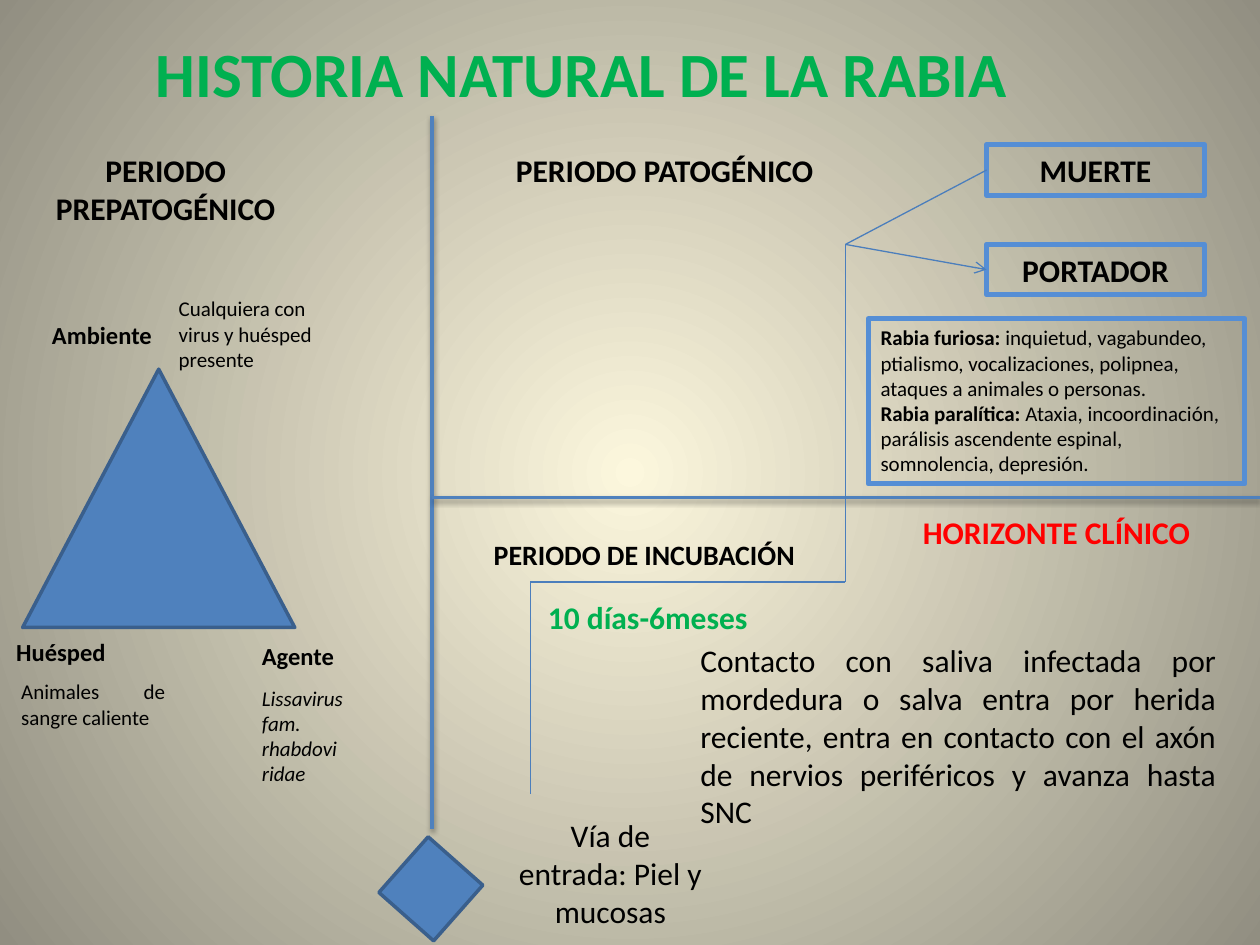
from dataclasses import dataclass

from lxml.etree import SubElement
from pptx import Presentation
from pptx.dml.color import RGBColor
from pptx.enum.shapes import MSO_CONNECTOR, MSO_SHAPE
from pptx.enum.text import MSO_ANCHOR, MSO_AUTO_SIZE, PP_ALIGN
from pptx.oxml.ns import qn
from pptx.util import Inches, Pt


@dataclass(frozen=True)
class Theme:
    font: str = "Calibri"
    ink: str = "000000"
    green: str = "00B050"
    red: str = "FF0000"
    blue: str = "4F81BD"
    dark_blue: str = "3A5F8C"
    path_blue: str = "4B7EBC"
    frame_blue: str = "558ED5"
    glow: str = "FCF7DD"
    edge: str = "918E81"
    title: int = 36
    large: int = 18
    medium: int = 16
    label: int = 14
    small: int = 12


@dataclass(frozen=True)
class Box:
    left: float
    top: float
    width: float
    height: float

    def inner(self, left, top, width, height):
        return Box(self.left + left, self.top + top, width, height)

    def point(self, x, y):
        return self.left + x, self.top + y

    def lengths(self):
        return [Inches(v) for v in (self.left, self.top, self.width, self.height)]


THEME = Theme()


def colour(code):
    return RGBColor.from_string(code)


def add_span(para, text, size, code=THEME.ink, bold=False, italic=False):
    span = para.add_run()
    span.text = text
    font = span.font
    font.name, font.size, font.bold, font.italic = THEME.font, Pt(size), bold, italic
    font.color.rgb = colour(code)


def add_text(page, box, text, size, align=PP_ALIGN.LEFT, **style):
    shape = page.shapes.add_textbox(*box.lengths())
    frame = shape.text_frame
    frame.word_wrap = True
    frame.auto_size = MSO_AUTO_SIZE.SHAPE_TO_FIT_TEXT
    para = frame.paragraphs[0]
    para.alignment = align
    add_span(para, text, size, **style)


def fill_placeholder(shape, box, text, size, code, anchor):
    shape.left, shape.top, shape.width, shape.height = box.lengths()
    frame = shape.text_frame
    frame.auto_size = MSO_AUTO_SIZE.NONE
    frame.vertical_anchor = anchor
    para = frame.paragraphs[0]
    para.alignment = PP_ALIGN.CENTER
    add_span(para, text, size, code, bold=True)
    return para


def add_solid(page, kind, box, rotation=0):
    shape = page.shapes.add_shape(kind, *box.lengths())
    shape.shadow.inherit = False
    shape.rotation = rotation
    shape.fill.solid()
    shape.fill.fore_color.rgb = colour(THEME.blue)
    shape.line.color.rgb = colour(THEME.dark_blue)
    shape.line.width = Pt(2)


def add_framed(page, box, paragraphs, size, align):
    """Outlined box; each paragraph is a list of (text, bold) spans."""
    shape = page.shapes.add_shape(MSO_SHAPE.RECTANGLE, *box.lengths())
    shape.shadow.inherit = False
    shape.fill.background()
    shape.line.color.rgb = colour(THEME.frame_blue)
    shape.line.width = Pt(3)
    frame = shape.text_frame
    frame.word_wrap = True
    frame.vertical_anchor = MSO_ANCHOR.TOP
    frame.auto_size = MSO_AUTO_SIZE.SHAPE_TO_FIT_TEXT
    for index, spans in enumerate(paragraphs):
        para = frame.add_paragraph() if index else frame.paragraphs[0]
        para.alignment = align
        for text, bold in spans:
            add_span(para, text, size, bold=bold)


def add_line(page, start, end, code=THEME.path_blue, width=0.75, arrow=False, shadow=False):
    ends = [Inches(v) for v in (*start, *end)]
    line = page.shapes.add_connector(MSO_CONNECTOR.STRAIGHT, *ends)
    line.line.color.rgb = colour(code)
    line.line.width = Pt(width)
    if arrow:
        SubElement(line.line._get_or_add_ln(), qn("a:tailEnd"), type="arrow")
    effects = SubElement(line._element.spPr, qn("a:effectLst"))
    if shadow:
        outer = SubElement(effects, qn("a:outerShdw"), blurRad=str(Pt(3.1)),
                           dist=str(Pt(1.6)), dir="5400000", rotWithShape="0")
        black = SubElement(outer, qn("a:srgbClr"), val=THEME.ink)
        SubElement(black, qn("a:alpha"), val="38000")


def paint_background(page):
    fill = page.background.fill
    fill.gradient()
    for stop, code, position in zip(fill.gradient_stops, (THEME.glow, THEME.edge), (0, 1)):
        stop.color.rgb = colour(code)
        stop.position = position
    gradient = page.element.find(".//" + qn("a:gradFill"))
    gradient.remove(gradient.find(qn("a:lin")))
    circle = SubElement(gradient, qn("a:path"), path="circle")
    SubElement(circle, qn("a:fillToRect"), l="50000", t="50000", r="50000", b="50000")


def build_headings(page, box):
    title, body = page.placeholders
    fill_placeholder(title, box.inner(0.75, 0.13, 7.73, 0.89), "HISTORIA NATURAL DE LA RABIA",
                     THEME.title, THEME.green, MSO_ANCHOR.MIDDLE)
    para = fill_placeholder(body, box.inner(-0.1, 1.15, 2.83, 0.55), "PERIODO PREPATOGÉNICO",
                            THEME.large, THEME.ink, MSO_ANCHOR.TOP)
    properties = para._p.get_or_add_pPr()
    properties.set("marL", "0")
    properties.set("indent", "0")
    SubElement(properties, qn("a:buNone"))


def build_axes(page, box):
    axis = dict(code=THEME.blue, width=2, shadow=True)
    add_line(page, box.point(0, 0), box.point(0, 5.66), **axis)
    add_line(page, box.point(0, 3.03), box.point(box.width, 3.03), **axis)
    add_solid(page, MSO_SHAPE.RECTANGLE, box.inner(-0.3, 5.84, 0.58, 0.59), 41.5)


def build_triad(page, box):
    """Environment, host and agent around the triangle."""
    add_solid(page, MSO_SHAPE.ISOSCELES_TRIANGLE, box.inner(0.18, 0.63, 2.16, 2.05))
    labels = [
        (box.inner(0.18, 0.19, 1.26, 0.34), "Ambiente", PP_ALIGN.CENTER),
        (box.inner(0.03, 2.71, 1.14, 0.34), "Huésped", PP_ALIGN.LEFT),
        (box.inner(1.98, 2.74, 1.02, 0.34), "Agente", PP_ALIGN.LEFT),
    ]
    for place, text, align in labels:
        add_text(page, place, text, THEME.label, align, bold=True)
    add_text(page, box.inner(1.32, 0, 1.31, 0.71),
             "Cualquiera con virus y huésped presente", THEME.small)
    add_text(page, box.inner(0.07, 3.04, 1.34, 0.5),
             "Animales de sangre caliente", THEME.small, PP_ALIGN.JUSTIFY)
    add_text(page, box.inner(1.98, 3.09, 0.85, 0.91),
             "Lissavirus fam. rhabdoviridae", THEME.small, italic=True)


def build_clinical(page, box):
    """Outcomes and signs above the clinical horizon."""
    add_text(page, box.inner(0, 0, 2.87, 0.4), "PERIODO PATOGÉNICO", THEME.large,
             PP_ALIGN.CENTER, bold=True)
    for row, outcome in enumerate(("MUERTE", "PORTADOR")):
        add_framed(page, box.inner(3.99, 0.79 * row, 1.73, 0.4), [[(outcome, True)]],
                   THEME.large, PP_ALIGN.CENTER)
        add_line(page, box.point(2.87, 0.79), box.point(3.99, 0.2 + 0.79 * row), arrow=row == 1)
    signs = [
        [("Rabia furiosa: ", True),
         ("inquietud, vagabundeo, ptialismo, vocalizaciones, polipnea, "
          "ataques a animales o personas.", False)],
        [("Rabia paralítica: ", True),
         ("Ataxia, incoordinación, parálisis ascendente espinal, "
          "somnolencia, depresión.", False)],
    ]
    add_framed(page, box.inner(3.05, 1.38, 2.99, 1.31), signs, THEME.small, PP_ALIGN.LEFT)


def build_incubation(page, box):
    """Entry route and incubation below the clinical horizon."""
    course = [box.point(*p) for p in ((0.39, 2.28), (0.39, 0.6), (2.89, 0.6), (2.89, -2.08))]
    for start, end in zip(course, course[1:]):
        add_line(page, start, end)
    add_text(page, box.inner(3.2, 0, 2.73, 0.4), "HORIZONTE CLÍNICO", THEME.large,
             PP_ALIGN.CENTER, code=THEME.red, bold=True)
    add_text(page, box.inner(0, 0.2, 2.87, 0.37), "PERIODO DE INCUBACIÓN",
             THEME.medium, bold=True)
    add_text(page, box.inner(0.43, 0.68, 2.05, 0.4), "10 días-6meses",
             THEME.large, code=THEME.green, bold=True)
    add_text(page, box.inner(1.64, 1.02, 4.29, 1.62),
             "Contacto con saliva infectada por mordedura o salva entra por herida reciente, "
             "entra en contacto con el axón de nervios periféricos y avanza hasta SNC",
             THEME.large, PP_ALIGN.JUSTIFY)
    add_text(page, box.inner(0.16, 2.41, 1.73, 1.01), "Vía de entrada: Piel y mucosas",
             THEME.large, PP_ALIGN.CENTER)


def main():
    deck = Presentation()
    deck.slide_width, deck.slide_height = Inches(10), Inches(7.5)
    page = deck.slides.add_slide(deck.slide_layouts[1])
    paint_background(page)
    build_headings(page, Box(0, 0, 10, 1.7))
    build_axes(page, Box(3.43, 0.92, 6.57, 6.43))
    build_triad(page, Box(0, 2.3, 3, 4))
    build_clinical(page, Box(3.84, 1.15, 6.04, 2.69))
    build_incubation(page, Box(3.82, 4.02, 5.93, 3.42))
    deck.save("out.pptx")


if __name__ == "__main__":
    main()
